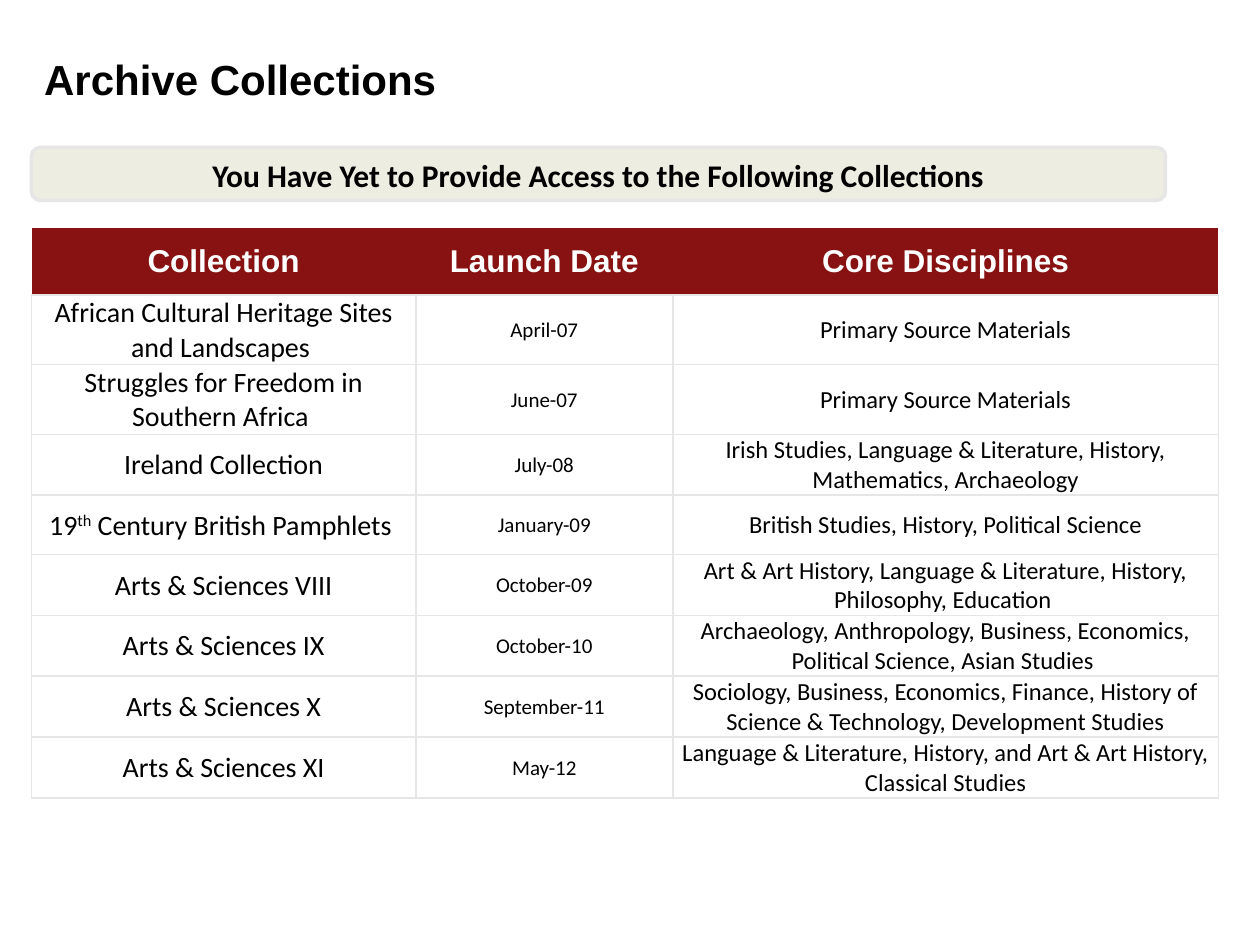
from dataclasses import dataclass, field
from typing import Any

from lxml.etree import SubElement
from pptx import Presentation
from pptx.dml.color import RGBColor
from pptx.enum.shapes import MSO_SHAPE
from pptx.enum.text import MSO_ANCHOR, PP_ALIGN
from pptx.oxml.ns import qn
from pptx.util import Inches, Pt

WIDE, HIGH = Inches(10), Inches(7.5)
COLS, ROWS = 40, 30
MARGIN = 1


@dataclass(frozen=True)
class Theme:
    ink: str = "000000"
    paper: str = "FFFFFF"
    brand: str = "881212"
    cream: str = "EEEDE2"
    rule: str = "E6E6E6"
    head: str = "Arial"
    body: str = "Calibri"
    title: int = 24
    label: int = 18
    sizes: tuple[int, ...] = (16, 12, 14)


@dataclass(frozen=True)
class Box:
    col: float
    row: float
    cols: float
    rows: float

    def place(self) -> dict[str, int]:
        return {
            "left": across(self.col),
            "top": down(self.row),
            "width": across(self.cols),
            "height": down(self.rows),
        }


@dataclass(frozen=True)
class Style:
    size: int
    name: str
    ink: str
    bold: bool = False


@dataclass(frozen=True)
class Entry:
    name: str
    launch: str
    fields: str


@dataclass(frozen=True)
class Look:
    fill: str
    sides: str
    inset: dict[str, Any] = field(default_factory=dict)


THEME = Theme()
HEADS = Entry("Collection", "Launch Date", "Core Disciplines")
ENTRIES = [
    Entry("African Cultural Heritage Sites and Landscapes ", "April-07", "Primary Source Materials"),
    Entry("Struggles for Freedom in Southern Africa ", "June-07", "Primary Source Materials"),
    Entry("Ireland Collection", "July-08",
          "Irish Studies, Language & Literature, History, Mathematics, Archaeology"),
    Entry("19^th^ Century British Pamphlets ", "January-09",
          "British Studies, History, Political Science"),
    Entry("Arts & Sciences VIII", "October-09",
          "Art & Art History, Language & Literature, History, Philosophy, Education "),
    Entry("Arts & Sciences IX", "October-10",
          "Archaeology, Anthropology, Business, Economics, Political Science, Asian Studies "),
    Entry("Arts & Sciences X", "September-11",
          "Sociology, Business, Economics, Finance, History of Science & Technology, Development Studies"),
    Entry("Arts & Sciences XI", "May-12",
          "Language & Literature, History, and Art & Art History, Classical Studies"),
]
SPANS = (12.2, 8.16, 17.32)
DEPTHS = (2.12, *[2.04] * 2, *[1.88] * 6)


def across(count: float) -> int:
    return round(WIDE * count / COLS)


def down(count: float) -> int:
    return round(HIGH * count / ROWS)


def apply(target: Any, values: dict[str, Any]) -> None:
    for key, value in values.items():
        setattr(target, key, value)


def write(frame: Any, text: str, style: Style, align: PP_ALIGN = PP_ALIGN.CENTER) -> None:
    para = frame.paragraphs[0]
    para.alignment = align
    for place, part in enumerate(text.split("^")):
        run = para.add_run()
        run.text = part
        apply(run.font, {"size": Pt(style.size), "name": style.name, "bold": style.bold})
        run.font.color.rgb = RGBColor.from_string(style.ink)
        if place % 2:
            run.font._element.set("baseline", "30000")


def paint(fill: Any, tone: str) -> None:
    fill.solid()
    fill.fore_color.rgb = RGBColor.from_string(tone)


def border(cell: Any, sides: str) -> None:
    props = cell._tc.get_or_add_tcPr()
    for side in "LRTB":
        line = SubElement(props, qn(f"a:ln{side}"), w=str(Pt(1)))
        if side in sides:
            SubElement(SubElement(line, qn("a:solidFill")), qn("a:srgbClr"), val=THEME.rule)
        else:
            SubElement(line, qn("a:noFill"))


def draw_cell(cell: Any, text: str, style: Style, look: Look) -> None:
    border(cell, look.sides)
    paint(cell.fill, look.fill)
    apply(cell, {"vertical_anchor": MSO_ANCHOR.MIDDLE, **look.inset})
    write(cell.text_frame, text, style)


def draw_table(slide: Any) -> None:
    box = Box(MARGIN, 7.24, sum(SPANS), sum(DEPTHS))
    table = slide.shapes.add_table(len(DEPTHS), len(SPANS), **box.place()).table
    for column, span in zip(table.columns, SPANS):
        column.width = across(span)
    for row, depth in zip(table.rows, DEPTHS):
        row.height = down(depth)
    edges = ("margin_left", "margin_right", "margin_top", "margin_bottom")
    flush = dict.fromkeys(edges, 0)
    thin = {**dict.fromkeys(edges, Inches(0.01)), "margin_bottom": 0}
    top = Look(THEME.brand, "B", flush)
    plain = Look(THEME.paper, "LRTB", thin)
    for index, entry in enumerate([HEADS, *ENTRIES]):
        texts = (entry.name, entry.launch, entry.fields)
        for cell, text, size in zip(table.rows[index].cells, texts, THEME.sizes):
            if index:
                draw_cell(cell, text, Style(size, THEME.body, THEME.ink), plain)
            else:
                draw_cell(cell, text, Style(THEME.label, THEME.head, THEME.paper, True), top)


def draw_title(slide: Any, text: str) -> None:
    title = slide.shapes.title
    apply(title, Box(MARGIN, 1, 31.32, 3).place())
    apply(title.text_frame, {"vertical_anchor": MSO_ANCHOR.MIDDLE, "word_wrap": True})
    write(title.text_frame, text, Style(THEME.title, THEME.head, THEME.ink, True), PP_ALIGN.LEFT)


def draw_banner(slide: Any, text: str) -> None:
    box = Box(MARGIN, 4.68, 36, 1.68)
    shape = slide.shapes.add_shape(MSO_SHAPE.ROUNDED_RECTANGLE, **box.place())
    shape.shadow.inherit = False
    paint(shape.fill, THEME.cream)
    paint(shape.line.fill, THEME.rule)
    shape.line.width = Pt(2)
    apply(shape.text_frame, {"vertical_anchor": MSO_ANCHOR.TOP, "word_wrap": True})
    write(shape.text_frame, text, Style(THEME.label, THEME.body, THEME.ink, True))


def main() -> None:
    deck = Presentation()
    apply(deck, {"slide_width": WIDE, "slide_height": HIGH})
    slide = deck.slides.add_slide(deck.slide_layouts.get_by_name("Title Only"))
    draw_title(slide, "Archive Collections")
    draw_table(slide)
    draw_banner(slide, "You Have Yet to Provide Access to the Following Collections")
    deck.save("out.pptx")


if __name__ == "__main__":
    main()
